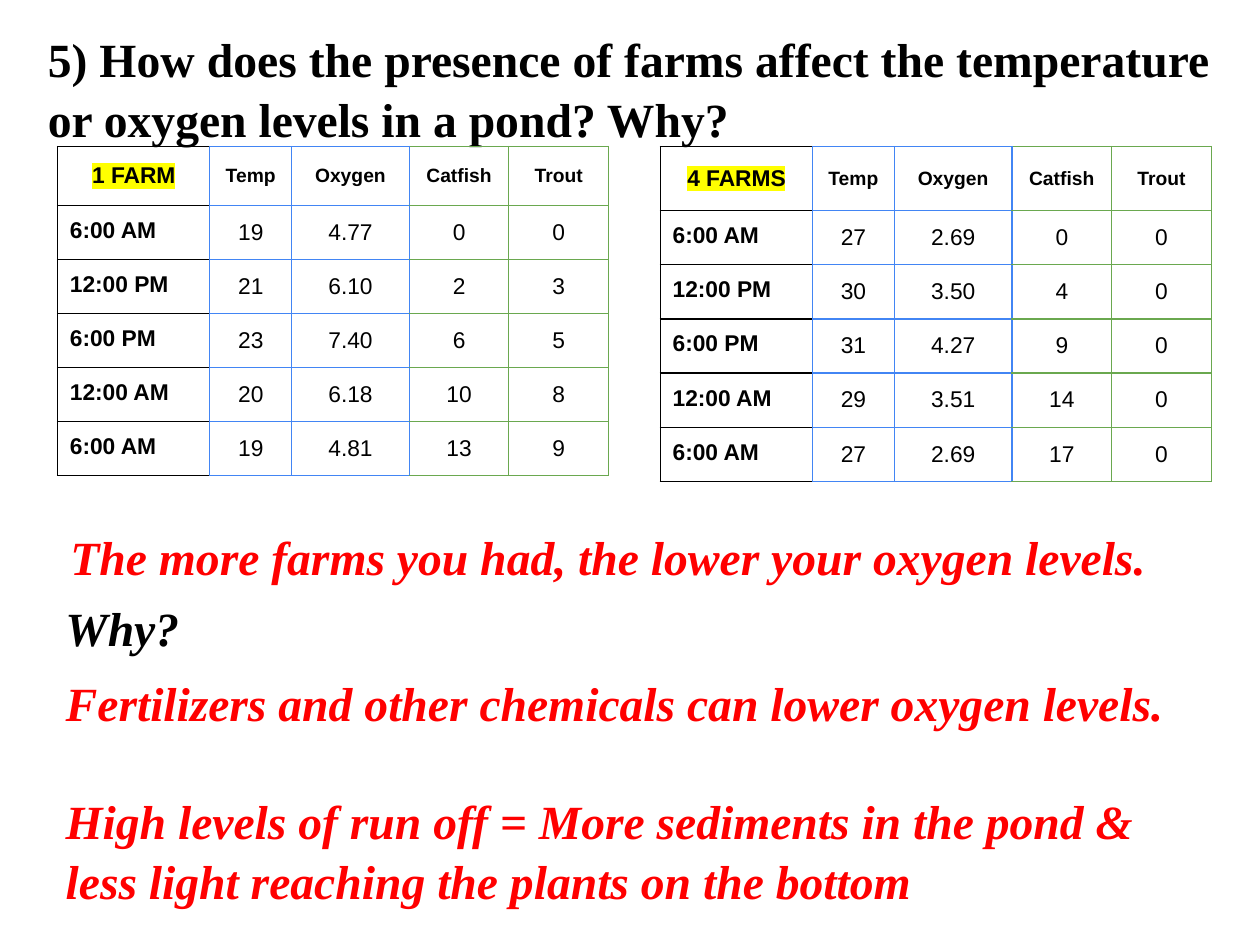
"""Build a slide comparing pond readings beside one farm and four farms."""
from dataclasses import dataclass
from typing import Any

from lxml import etree
from pptx import Presentation
from pptx import util as u
from pptx.dml import color as c
from pptx.enum import text as t
from pptx.oxml import ns

BLACK, RED, BLUE, GREEN, YELLOW = "000000", "FF0000", "4285F4", "6AA84F", "FFFF00"
HEADINGS = ("Temp", "Oxygen", "Catfish", "Trout")
TIMES = ("6:00 AM", "12:00 PM", "6:00 PM", "12:00 AM", "6:00 AM")
COLUMN_WIDTHS = (3.07, 1.65, 2.37, 2.01, 2.01)
ROW_HEIGHT = 1.09
BORDER_COLORS = (
    dict(L=BLACK, R=BLUE, T=BLACK, B=BLACK),
    dict.fromkeys("LRTB", BLUE),
    dict.fromkeys("LRTB", BLUE),
    dict(L=BLUE, R=GREEN, T=GREEN, B=GREEN),
    dict.fromkeys("LRTB", GREEN),
)
SERIF = {"name": "Times New Roman", "size": u.Pt(27.2), "bold": True}
ANSWER = {**SERIF, "italic": True}
LINE = {"line_spacing": 1.05, "space_before": u.Pt(0), "alignment": t.PP_ALIGN.LEFT}
FRAME = {
    "word_wrap": True,
    "auto_size": t.MSO_AUTO_SIZE.NONE,
    "vertical_anchor": t.MSO_ANCHOR.TOP,
}


@dataclass
class Box:
    left: float
    top: float
    width: float
    height: float

    def lengths(self) -> list:
        return [u.Cm(n) for n in (self.left, self.top, self.width, self.height)]


@dataclass
class PondTable:
    name: str
    left: float
    header_height: float
    readings: tuple


POND_TABLES = (
    PondTable("1 FARM", 1.16, 1.19, (
        ("19", "4.77", "0", "0"),
        ("21", "6.10", "2", "3"),
        ("23", "7.40", "6", "5"),
        ("20", "6.18", "10", "8"),
        ("19", "4.81", "13", "9"),
    )),
    PondTable("4 FARMS", 13.31, 1.3, (
        ("27", "2.69", "0", "0"),
        ("30", "3.50", "4", "0"),
        ("31", "4.27", "9", "0"),
        ("29", "3.51", "14", "0"),
        ("27", "2.69", "17", "0"),
    )),
)


def apply_format(target: Any, values: dict) -> None:
    for name, value in values.items():
        setattr(target, name, value)


def set_color(font: Any, color: str) -> None:
    font.color.rgb = c.RGBColor.from_string(color)


def add_color_xml(parent: Any, color: str) -> None:
    etree.SubElement(parent, ns.qn("a:srgbClr"), val=color)


def write(paragraph: Any, words: str, color: str, font: dict, layout: dict) -> Any:
    run = paragraph.add_run()
    run.text = words
    apply_format(run.font, font)
    set_color(run.font, color)
    apply_format(paragraph, layout)
    return run


def place(shape: Any, box: Box) -> Any:
    apply_format(shape, dict(zip(("left", "top", "width", "height"), box.lengths())))
    apply_format(shape.text_frame, FRAME)
    return shape.text_frame


def add_statement(slide: Any, box: Box, words: str, color: str) -> None:
    frame = place(slide.shapes.add_textbox(*box.lengths()), box)
    write(frame.paragraphs[0], words, color, ANSWER, LINE)


def fill_body(shape: Any, box: Box, statements: tuple) -> None:
    frame = place(shape, box)
    for index, words in enumerate(statements):
        paragraph = frame.add_paragraph() if index else frame.paragraphs[0]
        gap = {"space_before": u.Pt(32.9 if index else 0)}
        write(paragraph, words, RED, ANSWER, {**LINE, **gap})
        properties = paragraph._p.get_or_add_pPr()
        apply_attributes = {"marL": "0", "indent": "0"}
        for name, value in apply_attributes.items():
            properties.set(name, value)
        etree.SubElement(properties, ns.qn("a:buNone"))


def add_borders(cell: Any, colors: dict) -> None:
    properties = cell._tc.get_or_add_tcPr()
    for side, color in colors.items():
        line = etree.SubElement(properties, ns.qn(f"a:ln{side}"), w=str(u.Pt(0.75)))
        add_color_xml(etree.SubElement(line, ns.qn("a:solidFill")), color)


def highlight(run: Any, color: str) -> None:
    mark = etree.Element(ns.qn("a:highlight"))
    add_color_xml(mark, color)
    run.font._element.find(ns.qn("a:solidFill")).addnext(mark)


def add_pond_table(slide: Any, pond: PondTable) -> None:
    rows = [(pond.name, *HEADINGS)]
    rows += [(time, *values) for time, values in zip(TIMES, pond.readings)]
    heights = [pond.header_height] + [ROW_HEIGHT] * len(TIMES)
    box = Box(pond.left, 2.95, sum(COLUMN_WIDTHS), sum(heights))
    table = slide.shapes.add_table(len(rows), len(COLUMN_WIDTHS), *box.lengths()).table
    apply_format(table, {"first_row": False, "horz_banding": False})
    for column, width in zip(table.columns, COLUMN_WIDTHS):
        column.width = u.Cm(width)
    margins = dict.fromkeys(
        ("margin_left", "margin_right", "margin_top", "margin_bottom"), u.Cm(0.25))
    for row_index, (row, height) in enumerate(zip(rows, heights)):
        table.rows[row_index].height = u.Cm(height)
        for column_index, words in enumerate(row):
            is_header, is_label = row_index == 0, column_index == 0
            is_time = is_label and not is_header
            cell = table.cell(row_index, column_index)
            anchor = t.MSO_ANCHOR.TOP if is_time else t.MSO_ANCHOR.MIDDLE
            apply_format(cell, {**margins, "vertical_anchor": anchor})
            add_borders(cell, BORDER_COLORS[column_index])
            cell.fill.background()
            font = {
                "name": "Arial",
                "size": u.Pt(11 if is_header and not is_label else 13),
                "bold": is_header or is_label,
            }
            alignment = t.PP_ALIGN.LEFT if is_time else t.PP_ALIGN.CENTER
            run = write(cell.text_frame.paragraphs[0], words, BLACK, font,
                        {"alignment": alignment})
            if is_header and is_label:
                highlight(run, YELLOW)


def main() -> None:
    presentation = Presentation()
    presentation.slide_width, presentation.slide_height = u.Cm(25.4), u.Cm(19.05)
    slide = presentation.slides.add_slide(presentation.slide_layouts[1])
    title = place(slide.shapes.title, Box(0.71, 0.41, 23.95, 2.59))
    question = ("5) How does the presence of farms affect the temperature "
                "or oxygen levels in a pond? Why?")
    write(title.paragraphs[0], question, BLACK, SERIF,
          {**LINE, "alignment": t.PP_ALIGN.JUSTIFY})
    add_statement(slide, Box(1.17, 10.46, 23.24, 1.42),
                  "The more farms you had, the lower your oxygen levels.", RED)
    for pond in POND_TABLES:
        add_pond_table(slide, pond)
    add_statement(slide, Box(1.07, 11.89, 23.24, 1.42), "Why?", BLACK)
    fill_body(slide.placeholders[1], Box(1.07, 13.41, 23.24, 4.9), (
        "Fertilizers and other chemicals can lower oxygen levels.",
        "High levels of run off = More sediments in the pond & "
        "less light reaching the plants on the bottom",
    ))
    presentation.save("out.pptx")


if __name__ == "__main__":
    main()
